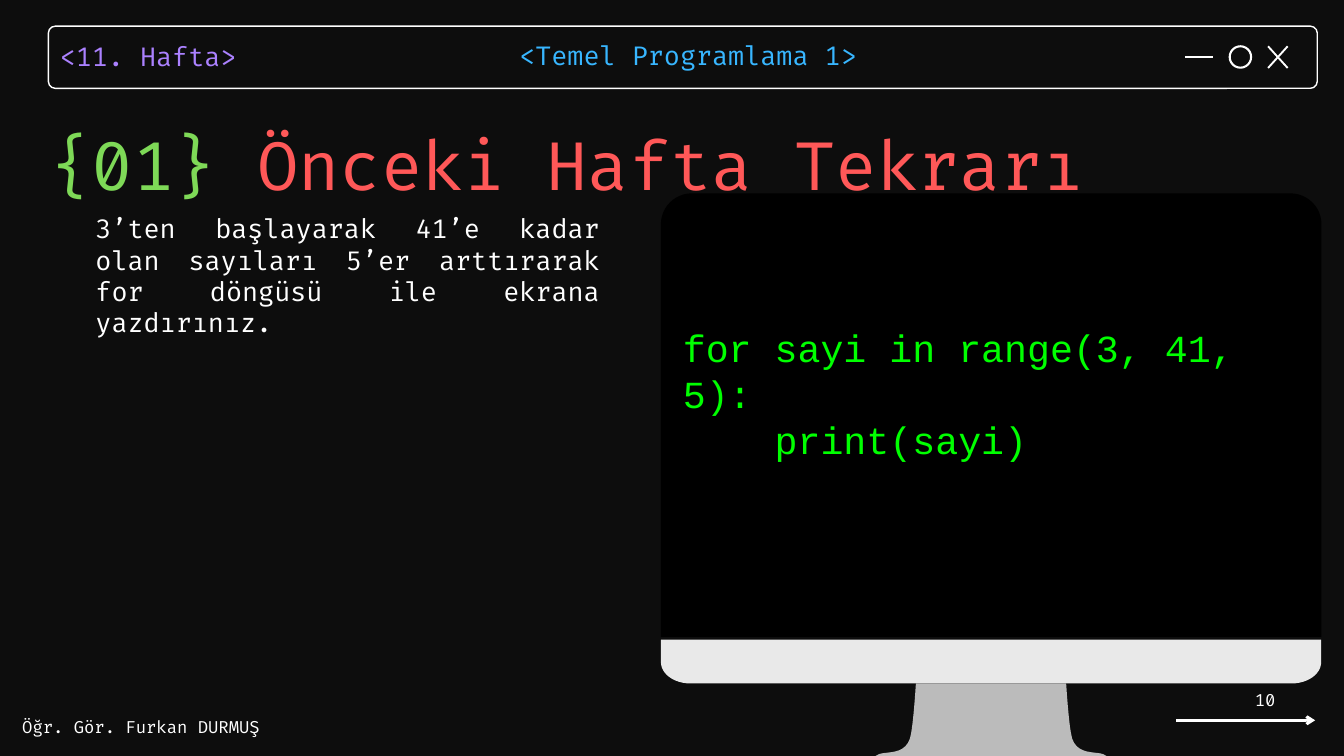
"""Build the weekly review slide with a code monitor."""
from pptx import Presentation
from pptx.dml.color import RGBColor
from pptx.enum.shapes import MSO_CONNECTOR as Connector, MSO_SHAPE as Shape
from pptx.enum.text import MSO_ANCHOR as Anchor, PP_ALIGN as Align
from pptx.oxml.ns import qn
from pptx.util import Cm, Pt
from lxml.etree import SubElement

COLOURS = {
    "night": "0D0D0D", "white": "FFFFFF", "purple": "AB81FF", "blue": "38B6FF",
    "green": "7ED957", "red": "FF5858", "black": "000000", "chin": "E9E9E9",
    "stand": "BBBBBB", "code": "00FF00",
}
RGB = {name: RGBColor.from_string(value) for name, value in COLOURS.items()}
AXIS = 37.46


def add_text(place, paragraphs, size, font="Fira Code", spacing=None, align=None):
    """Add a text box; each paragraph is a list of (text, colour) runs."""
    box = page.shapes.add_textbox(*map(Cm, place))
    frame = box.text_frame
    frame.word_wrap = True
    frame.margin_left = frame.margin_right = frame.margin_top = frame.margin_bottom = 0
    for index, runs in enumerate(paragraphs):
        para = frame.add_paragraph() if index else frame.paragraphs[0]
        para.alignment = align
        if spacing:
            para.line_spacing = Pt(spacing)
        for text, colour in runs:
            span = para.add_run()
            span.text = text
            span.font.size = Pt(size)
            span.font.name = font
            span.font.color.rgb = RGB[colour]
    return box


def add_symmetric(start, curves, colour):
    """Fill an outline whose left half is Bezier curves mirrored about the axis."""
    left = [start]
    for a, b, c in curves:
        corners = (left[-1], a, b, c)
        for step in range(1, 13):
            t = step / 12
            weights = ((1 - t) ** 3, 3 * t * (1 - t) ** 2, 3 * t * t * (1 - t), t ** 3)
            left.append(tuple(sum(w * p[i] for w, p in zip(weights, corners)) for i in (0, 1)))
    outline = left + [(2 * AXIS - x, y) for x, y in reversed(left)]
    points = [(Cm(x), Cm(y)) for x, y in outline]
    builder = page.shapes.build_freeform(*points[0])
    builder.add_line_segments(points[1:], close=True)
    shape = builder.convert_to_shape()
    shape.shadow.inherit = False
    shape.fill.solid()
    shape.fill.fore_color.rgb = RGB[colour]
    shape.line.fill.background()


deck = Presentation()
deck.slide_width, deck.slide_height = Cm(50.8), Cm(28.58)
page = deck.slides.add_slide(deck.slide_layouts[6])
page.background.fill.solid()
page.background.fill.fore_color.rgb = RGB["night"]

add_text((2.26, 1.32, 8.64, 1.35), [[("<11. Hafta>", "purple")]], 28, spacing=39.2)

strokes = [
    (44.45, 27.23, 49.71, 27.23, 3, "arrow"),
    (47.93, 1.75, 48.67, 2.57, 2, "none"),
    (47.93, 2.57, 48.67, 1.75, 2, "none"),
    (44.79, 2.16, 45.85, 2.16, 2, "none"),
]
for x1, y1, x2, y2, weight, head in strokes:
    stroke = page.shapes.add_connector(Connector.STRAIGHT, Cm(x1), Cm(y1), Cm(x2), Cm(y2))
    stroke.line.color.rgb = RGB["white"]
    stroke.line.width = Pt(weight)
    SubElement(stroke.line._get_or_add_ln(), qn("a:tailEnd"), type=head)
    SubElement(stroke._element.spPr, qn("a:effectLst"))

outlines = [
    (Shape.ROUNDED_RECTANGLE, (1.83, 0.99, 47.96, 2.35), 1.5),
    (Shape.OVAL, (46.48, 1.75, 0.81, 0.81), 2.25),
]
for kind, place, weight in outlines:
    outline = page.shapes.add_shape(kind, *map(Cm, place))
    outline.shadow.inherit = False
    outline.fill.background()
    outline.line.color.rgb = RGB["white"]
    outline.line.width = Pt(weight)
    if kind == Shape.ROUNDED_RECTANGLE:
        outline.adjustments[0] = 0.11

add_text((19.63, 1.3, 13.44, 1.35), [[("<Temel Programlama 1>", "blue")]], 28, spacing=39.2)
add_text((0.84, 27.1, 9.32, 0.76), [[("Öğr. Gör. Furkan DURMUŞ", "white")]], 18)
task = "3’ten başlayarak 41’e kadar olan sayıları 5’er arttırarak for döngüsü ile ekrana yazdırınız."
add_text((3.61, 8.04, 19.05, 3.58), [[(task, "white")]], 28, align=Align.JUSTIFY)
number = add_text((42.55, 25.93, 5.66, 1.02), [[("10", "white")]], 18, align=Align.RIGHT)
number.text_frame.vertical_anchor = Anchor.MIDDLE
heading = [("{01} ", "green"), ("Önceki Hafta Tekrarı", "red")]
add_text((1.91, 4.09, 48.88, 3.58), [heading], 72, spacing=102.6)

screen = page.shapes.add_shape(
    Shape.ROUND_2_SAME_RECTANGLE, Cm(24.98), Cm(7.31), Cm(24.97), Cm(16.77))
screen.shadow.inherit = False
screen.adjustments[0] = 0.07
screen.fill.solid()
screen.fill.fore_color.rgb = RGB["black"]
screen.line.fill.background()

add_symmetric((24.98, 24.18), [
    ((24.98, 24.18), (24.98, 25.02), (24.98, 25.02)),
    ((24.98, 25.48), (25.48, 25.84), (26.11, 25.84)),
], "chin")
add_symmetric((34.62, 25.84), [
    ((34.62, 25.84), (34.54, 27.15), (34.44, 27.71)),
    ((34.32, 28.65), (33.4, 28.35), (33.15, 28.55)),
    ((33.13, 28.56), (33.11, 28.57), (33.1, 28.58)),
], "stand")

code = [[("for sayi in range(3, 41, 5):", "code")], [("    print(sayi)", "code")]]
add_text((25.81, 12.27, 23.6, 3.51), code, 41, font="Courier New")

deck.save("out.pptx")
